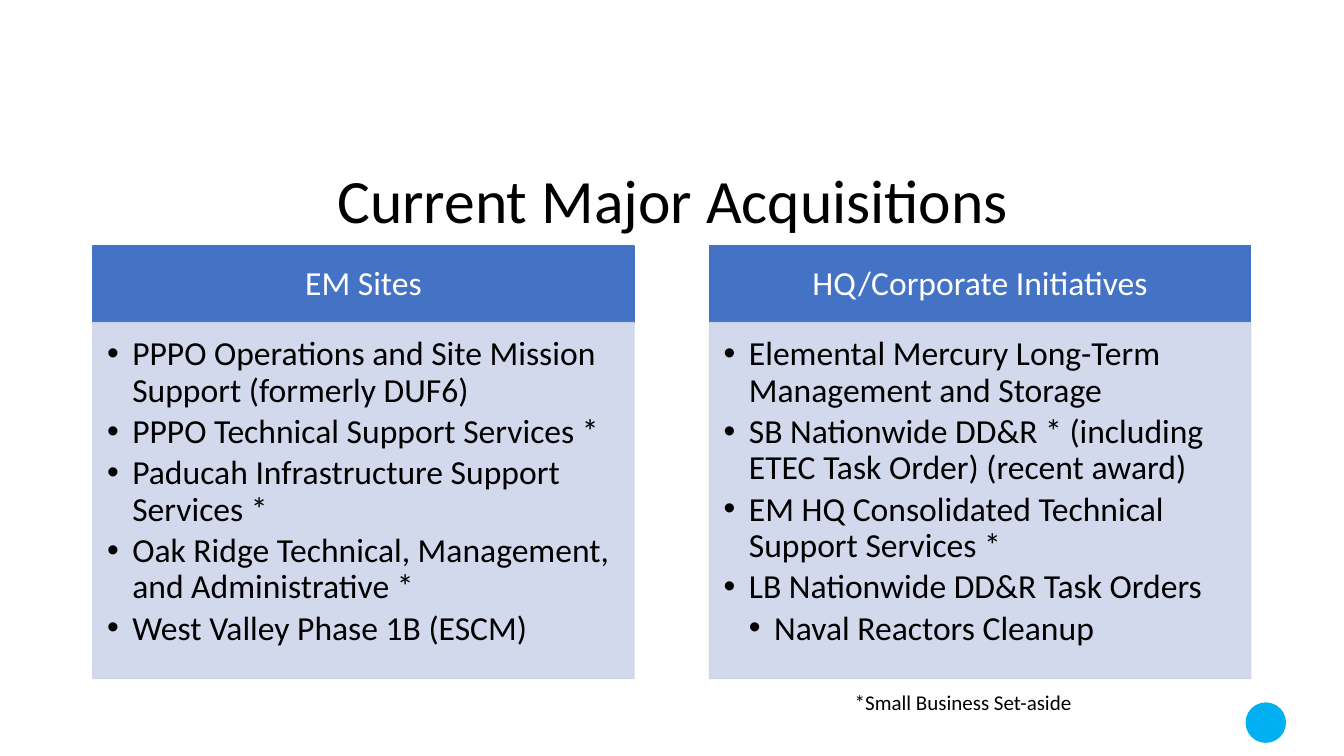
from dataclasses import dataclass

from lxml.etree import SubElement
from pptx import Presentation
from pptx.dml.color import RGBColor
from pptx.enum.shapes import MSO_SHAPE as Preset
from pptx.enum.text import MSO_ANCHOR as Anchor, MSO_AUTO_SIZE as AutoSize, PP_ALIGN as Align
from pptx.oxml.ns import qn
from pptx.shapes.autoshape import Shape
from pptx.slide import Slide
from pptx.text.text import TextFrame, _Paragraph as Paragraph
from pptx.util import Cm, Pt

COLORS = {
    "header": "4472C4",
    "body": "CFD5EA",
    "dot": "00B0F0",
    "text": "000000",
    "header_text": "FFFFFF",
}
FONT = "Calibri"
COLUMN_TOP = 6.2
COLUMN_WIDTH = 13.64
HEADER_HEIGHT = 1.93
BODY_HEIGHT = 8.97
TEXT_SIZE = 24
INDENT = 0.635


@dataclass
class Item:
    text: str
    level: int = 1


@dataclass
class Column:
    left: float
    heading: str
    items: list[Item]


COLUMNS = [
    Column(2.34, "EM Sites", [
        Item("PPPO Operations and Site Mission Support (formerly DUF6)"),
        Item("PPPO Technical Support Services *"),
        Item("Paducah Infrastructure Support Services *"),
        Item("Oak Ridge Technical, Management, and Administrative *"),
        Item("West Valley Phase 1B (ESCM)"),
    ]),
    Column(17.88, "HQ/Corporate Initiatives", [
        Item("Elemental Mercury Long-Term Management and Storage"),
        Item("SB Nationwide DD&R * (including ETEC Task Order) (recent award)"),
        Item("EM HQ Consolidated Technical Support Services *"),
        Item("LB Nationwide DD&R Task Orders"),
        Item("Naval Reactors Cleanup", level=2),
    ]),
]


def color(name: str) -> RGBColor:
    return RGBColor.from_string(COLORS[name])


def add_run(paragraph: Paragraph, text: str, size: float, color_name: str = "text") -> None:
    run = paragraph.add_run()
    run.text = text
    run.font.name = FONT
    run.font.size = Pt(size)
    run.font.color.rgb = color(color_name)


def set_margins(frame: TextFrame, left: float, top: float, right: float, bottom: float) -> None:
    frame.margin_left, frame.margin_top = Cm(left), Cm(top)
    frame.margin_right, frame.margin_bottom = Cm(right), Cm(bottom)
    frame.word_wrap = True


def add_filled(slide: Slide, preset: Preset, left: float, top: float,
               width: float, height: float, color_name: str) -> Shape:
    shape = slide.shapes.add_shape(preset, Cm(left), Cm(top), Cm(width), Cm(height))
    shape.shadow.inherit = False
    shape.fill.solid()
    shape.fill.fore_color.rgb = color(color_name)
    shape.line.color.rgb = color(color_name)
    shape.line.width = Pt(1)
    return shape


def set_opacity(shape: Shape, percent: int) -> None:
    for element in shape._element.spPr.iter(qn("a:srgbClr")):
        SubElement(element, qn("a:alpha"), val=str(percent * 1000))


def add_bullet(paragraph: Paragraph, level: int) -> None:
    paragraph.level = level
    properties = paragraph._p.get_or_add_pPr()
    properties.set("marL", str(Cm(INDENT * level)))
    properties.set("indent", str(-Cm(INDENT)))
    SubElement(properties, qn("a:buFont"), typeface="Arial")
    SubElement(properties, qn("a:buChar"), char="•")


def add_column(slide: Slide, column: Column) -> None:
    header = add_filled(slide, Preset.RECTANGLE, column.left, COLUMN_TOP,
                        COLUMN_WIDTH, HEADER_HEIGHT, "header")
    frame = header.text_frame
    set_margins(frame, 0.48, 0.28, 0.48, 0.28)
    frame.vertical_anchor = Anchor.MIDDLE
    paragraph = frame.paragraphs[0]
    paragraph.alignment = Align.CENTER
    paragraph.line_spacing = 0.9
    add_run(paragraph, column.heading, TEXT_SIZE, "header_text")

    body = add_filled(slide, Preset.RECTANGLE, column.left, COLUMN_TOP + HEADER_HEIGHT,
                      COLUMN_WIDTH, BODY_HEIGHT, "body")
    set_opacity(body, 90)
    frame = body.text_frame
    set_margins(frame, 0.36, 0.36, 0.48, 0.53)
    frame.vertical_anchor = Anchor.TOP
    for index, item in enumerate(column.items):
        paragraph = frame.add_paragraph() if index else frame.paragraphs[0]
        add_bullet(paragraph, item.level)
        paragraph.alignment = Align.LEFT
        paragraph.line_spacing = 0.9
        paragraph.space_after = Pt(TEXT_SIZE * 0.15)
        add_run(paragraph, item.text, TEXT_SIZE)


def add_title(slide: Slide) -> None:
    title = slide.shapes.title
    title.left, title.top = Cm(2.74), Cm(3.73)
    title.width, title.height = Cm(22.94), Cm(2.82)
    frame = title.text_frame
    frame.word_wrap = True
    frame.auto_size = AutoSize.NONE
    frame.vertical_anchor = Anchor.MIDDLE
    paragraph = frame.paragraphs[0]
    paragraph.alignment = Align.RIGHT
    paragraph.line_spacing = 0.9
    add_run(paragraph, "Current Major Acquisitions", 44)


def add_footnote(slide: Slide) -> None:
    box = slide.shapes.add_textbox(Cm(21.29), Cm(17.25), Cm(8.23), Cm(0.89))
    box.text_frame.word_wrap = True
    box.text_frame.auto_size = AutoSize.SHAPE_TO_FIT_TEXT
    add_run(box.text_frame.paragraphs[0], "*Small Business Set-aside", 15)


def main() -> None:
    presentation = Presentation()
    presentation.slide_width, presentation.slide_height = Cm(33.87), Cm(19.05)
    slide = presentation.slides.add_slide(presentation.slide_layouts[5])
    dot = add_filled(slide, Preset.OVAL, 31.39, 17.7, 1.02, 1.02, "dot")
    dot.line.fill.background()
    add_title(slide)
    add_footnote(slide)
    for column in COLUMNS:
        add_column(slide, column)
    presentation.save("out.pptx")


if __name__ == "__main__":
    main()
